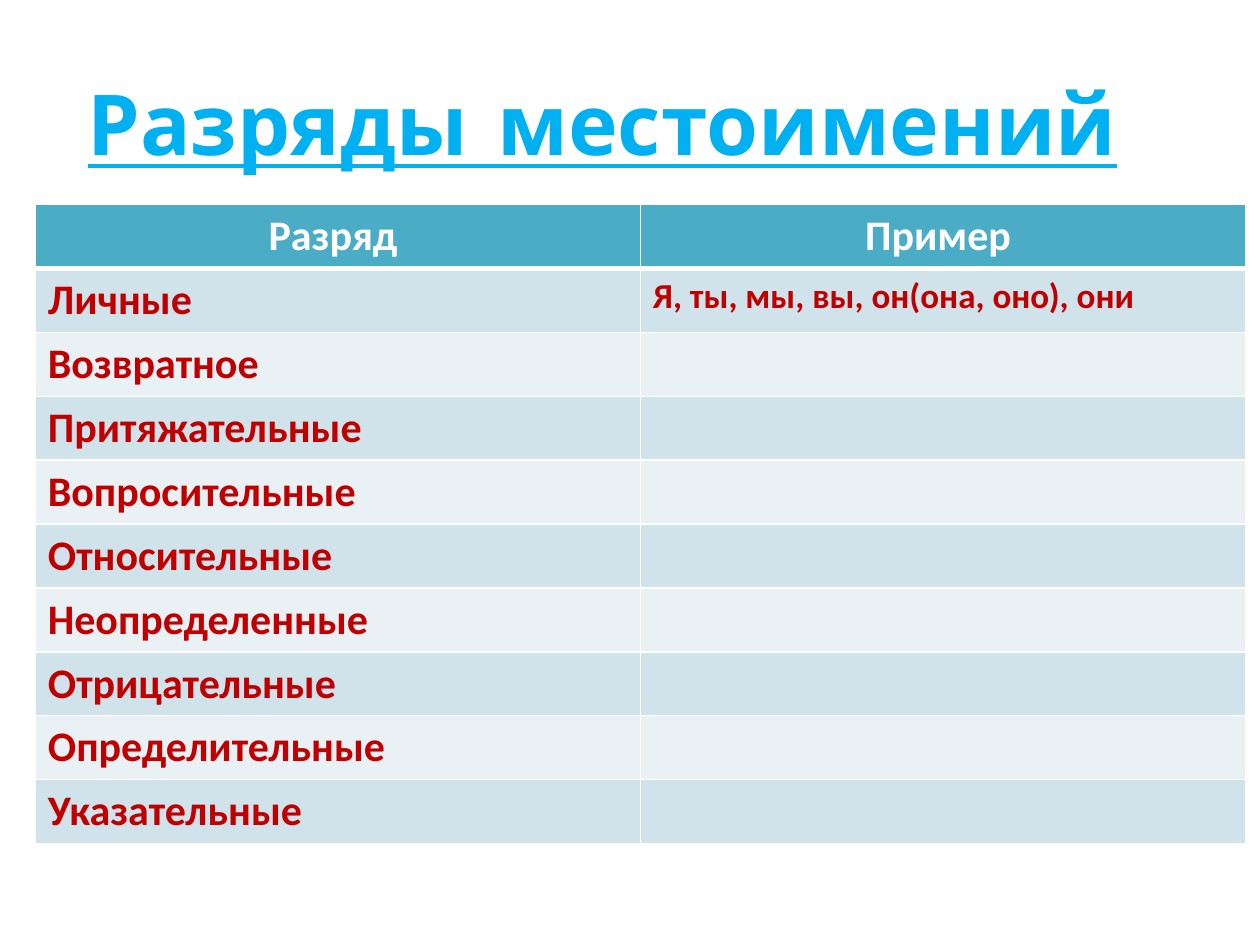
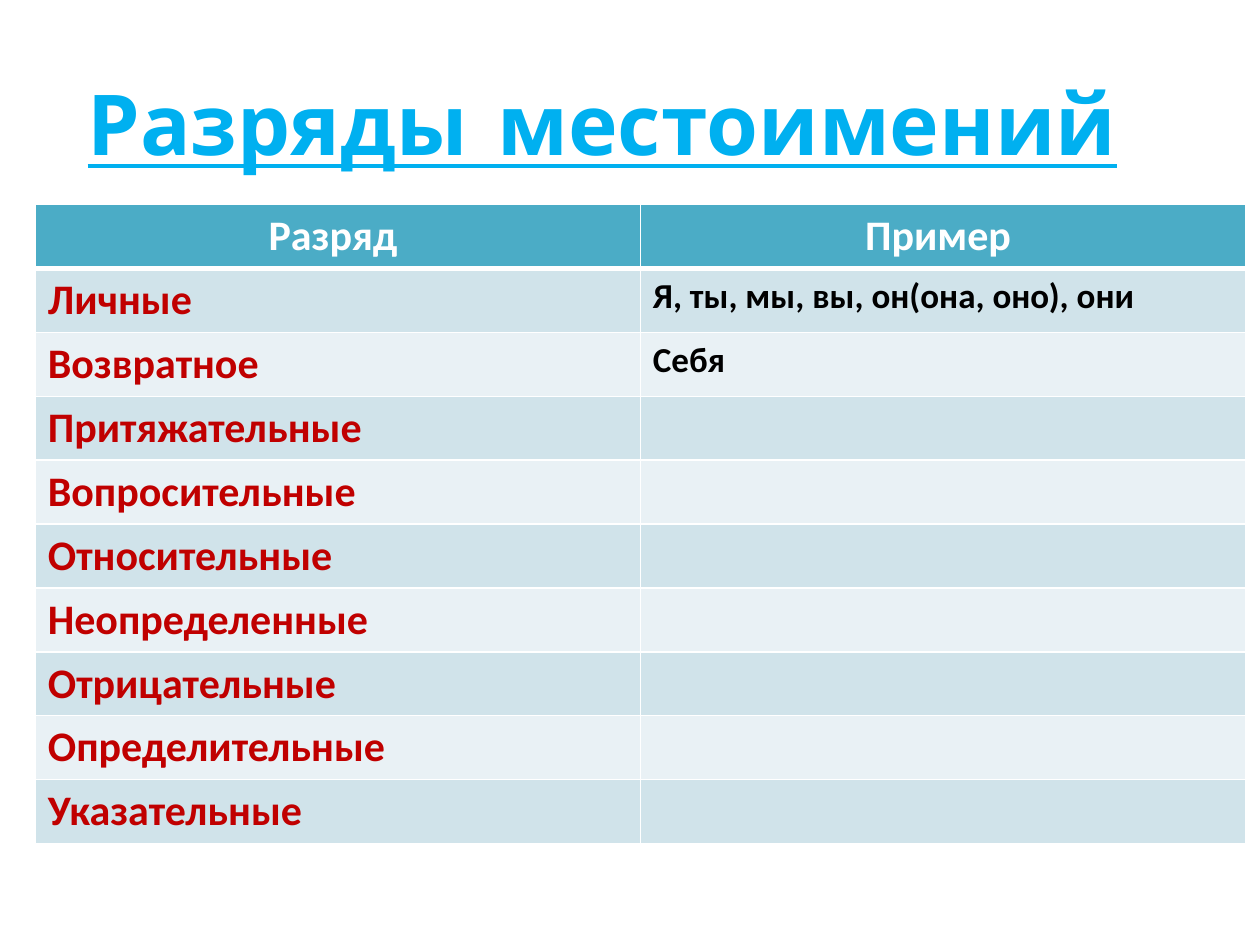
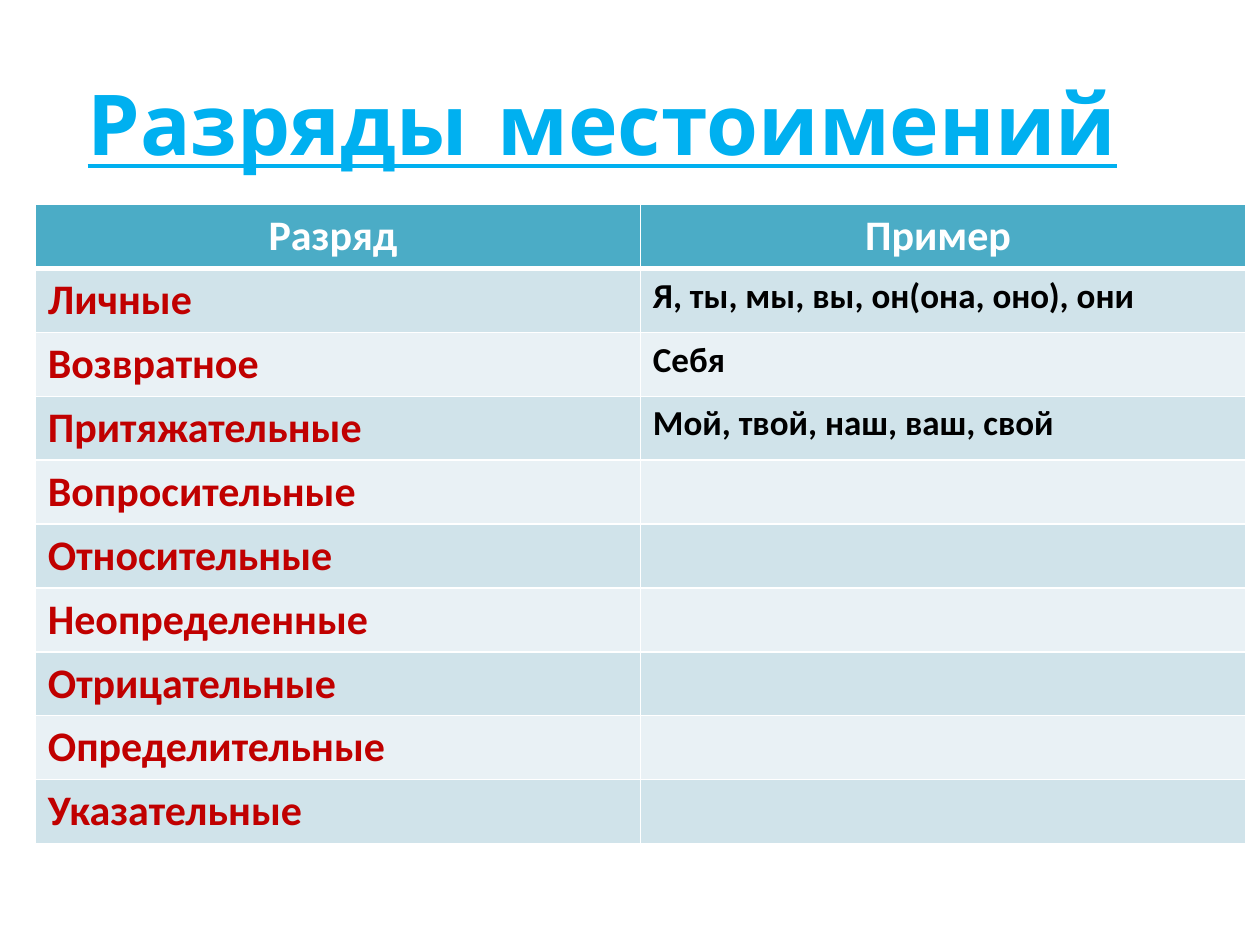
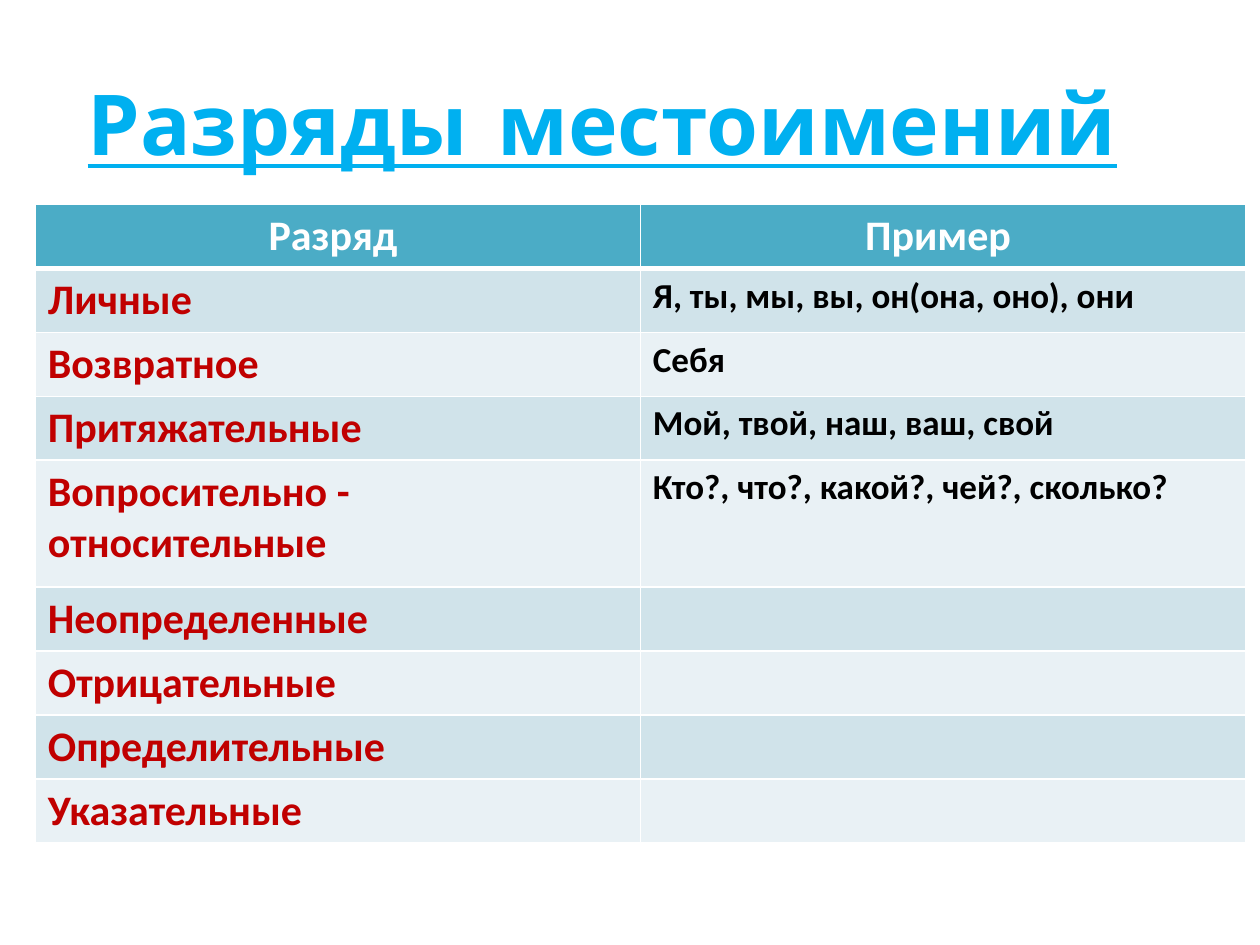
from typing import NamedTuple

from lxml.etree import SubElement
from pptx import Presentation
from pptx.dml.color import RGBColor
from pptx.enum.shapes import MSO_SHAPE
from pptx.enum.text import MSO_ANCHOR, PP_ALIGN
from pptx.oxml import parse_xml
from pptx.oxml.ns import nsdecls, qn
from pptx.slide import Slide
from pptx.table import _Cell
from pptx.text.text import _Paragraph
from pptx.util import Pt

WHITE = RGBColor(0xFF, 0xFF, 0xFF)
BLACK = RGBColor(0, 0, 0)
RED = RGBColor(0xC0, 0, 0)
SKY = RGBColor(0, 0xB0, 0xF0)
TEAL = RGBColor(0x4B, 0xAC, 0xC6)
BANDS = (RGBColor(0xE9, 0xF1, 0xF5), RGBColor(0xD0, 0xE3, 0xEA))

LEFT = Pt(20.16)
ROW = 36.3
COL = Pt(345.75)


class Style(NamedTuple):
    size: float
    color: RGBColor
    font: str = "Calibri"
    align: PP_ALIGN = PP_ALIGN.LEFT
    line: bool = False


class Entry(NamedTuple):
    kind: str
    sample: str = ""
    lines: int = 1


class Page(NamedTuple):
    entries: list[Entry]
    shown: int
    color: RGBColor = BLACK


TITLE = Style(48, SKY, "Comic Neue", PP_ALIGN.CENTER, True)
HEAD = Style(24, WHITE, align=PP_ALIGN.CENTER)
KIND = Style(24, RED)

START = [
    Entry("Личные", "Я, ты, мы, вы, он(она, оно), они"),
    Entry("Возвратное", "Себя"),
    Entry("Притяжательные", "Мой, твой, наш, ваш, свой"),
]
SPLIT = [Entry("Вопросительные"), Entry("Относительные")]
JOINED = [Entry("Вопросительно - относительные",
                "Кто?, что?, какой?, чей?, сколько?", 2)]
REST = [Entry(kind) for kind in (
    "Неопределенные", "Отрицательные", "Определительные", "Указательные")]

PAGES = [
    Page(START + SPLIT + REST, 1, RED),
    Page(START + SPLIT + REST, 2),
    Page(START + SPLIT + REST, 3),
    Page(START + JOINED + REST, 4),
]


def write(para: _Paragraph, text: str, style: Style) -> None:
    para.text = text
    para.alignment = style.align
    font = para.font
    font.name = style.font
    font.size = Pt(style.size)
    font.bold = True
    font.underline = style.line
    font.color.rgb = style.color


def add_title(slide: Slide) -> None:
    box = slide.shapes.add_shape(
        MSO_SHAPE.RECTANGLE, LEFT, Pt(37.44), Pt(648), Pt(339.84))
    box.shadow.inherit = False
    box.line.fill.background()
    box.fill.solid()
    box.fill.fore_color.rgb = WHITE
    tint = box.fill._xPr.find(f".//{qn('a:srgbClr')}")
    SubElement(tint, qn("a:alpha"), val="65000")
    frame = box.text_frame
    frame.word_wrap = True
    frame.vertical_anchor = MSO_ANCHOR.TOP
    write(frame.paragraphs[0], "Разряды местоимений", TITLE)


def set_cell(cell: _Cell, text: str, style: Style, fill: RGBColor,
             top: float = 1, base: float = 1) -> None:
    write(cell.text_frame.paragraphs[0], text, style)
    cell.fill.solid()
    cell.fill.fore_color.rgb = fill
    props = cell._tc.get_or_add_tcPr()
    sides = (("lnL", 1), ("lnR", 1), ("lnT", top), ("lnB", base))
    for spot, (side, width) in enumerate(sides):
        props.insert(spot, parse_xml(
            f'<a:{side} {nsdecls("a")} w="{Pt(width)}"><a:solidFill>'
            f'<a:srgbClr val="{WHITE}"/></a:solidFill></a:{side}>'))


def add_grid(slide: Slide, page: Page) -> None:
    spans = [1] + [entry.lines for entry in page.entries]
    grid = slide.shapes.add_table(
        len(spans), 2, LEFT, Pt(116.9), COL * 2, Pt(ROW * sum(spans))).table
    for col in grid.columns:
        col.width = COL
    for row, span in zip(grid.rows, spans):
        row.height = Pt(ROW * span)
    for col, text in enumerate(("Разряд ", "Пример ")):
        set_cell(grid.cell(0, col), text, HEAD, TEAL, base=3)
    sample = Style(20, page.color)
    for row, entry in enumerate(page.entries, 1):
        fill = BANDS[row % 2]
        top = 3 if row == 1 else 1
        text = entry.sample if row <= page.shown else ""
        set_cell(grid.cell(row, 0), entry.kind, KIND, fill, top)
        set_cell(grid.cell(row, 1), text, sample, fill, top)


def main() -> None:
    deck = Presentation()
    deck.slide_width = Pt(720)
    deck.slide_height = Pt(540)
    for page in PAGES:
        slide = deck.slides.add_slide(deck.slide_layouts[6])
        add_title(slide)
        add_grid(slide, page)
    deck.save("out.pptx")


if __name__ == "__main__":
    main()
